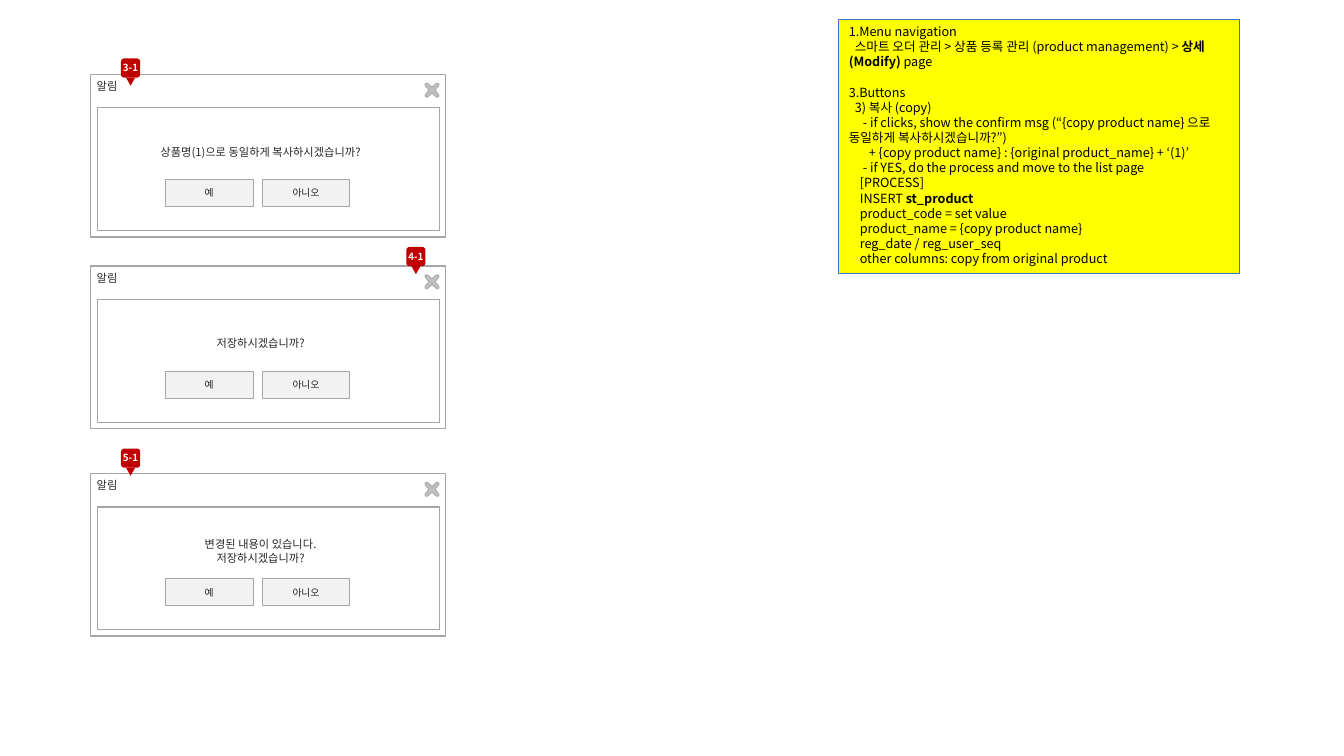
"""Build the confirmation dialogs slide with its functional notes."""
from dataclasses import dataclass

from pptx import Presentation
from pptx import util as u
from pptx.dml.color import RGBColor
from pptx.enum import shapes as s
from pptx.enum import text as t
from pptx.oxml import ns

FONT = "Noto Sans CJK KR"
DARK, WHITE, BLACK = "262626", "FFFFFF", "000000"
GREY, RED = "A6A6A6", "C00000"
DIALOG_LEFT = 0.9
TIGHT = (0.06, 0.03)
REGULAR = (0.1, 0.05)
RECTANGLE = s.MSO_SHAPE.RECTANGLE
ROUNDED = s.MSO_SHAPE.ROUNDED_RECTANGLE
CENTER = t.PP_ALIGN.CENTER
MIDDLE = t.MSO_ANCHOR.MIDDLE
ARM = [(0, -0.03), (0.04, -0.065), (0.055, -0.07), (0.065, -0.065), (0.07, -0.055), (0.065, -0.04)]


@dataclass(frozen=True)
class Dialog:
    top: float
    message: str
    badge: str
    badge_left: float
    badge_top: float


@dataclass(frozen=True)
class Note:
    runs: tuple[str, ...]
    indent: float = 0
    bold_run: int = -1
    space_before: float = 0


DIALOGS = [
    Dialog(0.74, "상품명(1)으로 동일하게 복사하시겠습니까?", "3-1", 1.2, 0.58),
    Dialog(2.64, "저장하시겠습니까?", "4-1", 4.03, 2.45),
    Dialog(4.7, "변경된 내용이 있습니다.\n저장하시겠습니까?", "5-1", 1.2, 4.45),
]

NOTES = [
    Note(("1.Menu navigation",)),
    Note(("스마트 오더 관리 > 상품 등록 관리 (product management) > ", "상세 (Modify)", " page"), 0.06, 1),
    Note(("3.Buttons",), space_before=10.8),
    Note(("3) 복사 (copy)",), 0.06),
    Note(("- if clicks, show the confirm msg (“{copy product name} 으로 동일하게 복사하시겠습니까?”)",), 0.14),
    Note(("+ {copy product name} : {original product_name} + ‘(1)’",), 0.2),
    Note(("- if YES, do the process and move to the list page",), 0.14),
    Note(("[PROCESS]",), 0.11),
    Note(("INSERT ", "st_product"), 0.11, 1),
    Note(("product_code = set value",), 0.11),
    Note(("product_name = {copy product name}",), 0.11),
    Note(("reg_date / reg_user_seq",), 0.11),
    Note(("other columns: copy from original product",), 0.11),
]


def color(value: str) -> RGBColor:
    return RGBColor.from_string(value)


def paint(shape, fill: str, line: str = "", width: float = 0.5) -> None:
    shape.shadow.inherit = False
    shape.fill.solid()
    shape.fill.fore_color.rgb = color(fill)
    if line:
        shape.line.color.rgb = color(line)
        shape.line.width = u.Pt(width)
    else:
        shape.line.fill.background()


def add_box(parent, kind, left: float, top: float, width: float, height: float,
            fill: str, line: str = "", line_width: float = 0.5):
    shape = parent.add_shape(kind, *map(u.Inches, (left, top, width, height)))
    paint(shape, fill, line, line_width)
    return shape


def format_run(run, size: float, value: str, bold: bool = False) -> None:
    run.font.size = u.Pt(size)
    run.font.name = FONT
    run.font.bold = bold
    run.font.color.rgb = color(value)
    east_asian = run.font._element.makeelement(ns.qn("a:ea"), {"typeface": FONT})
    run.font._element.find(ns.qn("a:latin")).addnext(east_asian)


def set_frame(shape, insets: tuple[float, float], anchor=t.MSO_ANCHOR.TOP, wrap: bool = True):
    frame = shape.text_frame
    frame.word_wrap = wrap
    frame.vertical_anchor = anchor
    frame.margin_left = frame.margin_right = u.Inches(insets[0])
    frame.margin_top = frame.margin_bottom = u.Inches(insets[1])
    return frame


def write(shape, text: str, size: float, value: str = DARK, bold: bool = False,
          align=CENTER, **frame_options) -> None:
    frame = set_frame(shape, **frame_options)
    frame.text = text
    for paragraph in frame.paragraphs:
        paragraph.alignment = align
        if len(frame.paragraphs) > 1:
            paragraph.line_spacing = u.Pt(10)
        for run in paragraph.runs:
            format_run(run, size, value, bold)


def add_label(parent, left: float, top: float, width: float, height: float):
    return parent.add_textbox(*map(u.Inches, (left, top, width, height)))


def add_close_icon(parent, center_x: float, center_y: float) -> None:
    points, arm = [], ARM
    for _ in range(4):
        points += [(u.Inches(center_x + x), u.Inches(center_y + y)) for x, y in arm]
        arm = [(-y, x) for x, y in arm]
    builder = parent.build_freeform(*points[0], scale=1.0)
    builder.add_line_segments(points[1:], close=True)
    paint(builder.convert_to_shape(), "BFBFBF", GREY)


def add_badge(parent, text: str, left: float, top: float) -> None:
    badge = parent.add_group_shape().shapes
    pointer = add_box(badge, s.MSO_SHAPE.ISOSCELES_TRIANGLE, left + 0.05, top + 0.19, 0.09, 0.08, RED)
    pointer.rotation = 180
    add_box(badge, ROUNDED, left, top, 0.19, 0.19, RED)
    label = add_label(badge, left - 0.04, top - 0.015, 0.27, 0.22)
    write(label, text, 7, WHITE, True, insets=(0.05, 0.05))


def add_dialog(parent, dialog: Dialog) -> None:
    left, top = DIALOG_LEFT, dialog.top
    add_box(parent, RECTANGLE, left, top, 3.52, 1.61, WHITE, GREY, 1)
    add_box(parent, RECTANGLE, left + 0.07, top + 0.33, 3.39, 1.22, WHITE, GREY, 0.75)
    for offset, answer in ((1.7, "아니오"), (0.74, "예")):
        button = add_box(parent, ROUNDED, left + offset, top + 1.04, 0.87, 0.27, "F2F2F2", GREY)
        button.adjustments[0] = 0
        write(button, answer, 7, insets=REGULAR, anchor=MIDDLE, wrap=False)
    add_close_icon(parent, left + 3.385, top + 0.155)
    message = add_label(parent, left + 0.11, top + 0.49, 3.15, 0.55)
    write(message, dialog.message, 8, insets=TIGHT, anchor=MIDDLE)
    heading = add_label(parent, left, top + 0.02, 0.47, 0.21)
    write(heading, "알림", 8, align=t.PP_ALIGN.LEFT, insets=TIGHT)
    add_badge(parent, dialog.badge, dialog.badge_left, dialog.badge_top)


def add_notes(parent) -> None:
    panel = add_box(parent, RECTANGLE, 8.32, 0.19, 3.97, 2.52, "FFFF00", "4472C4", 0.75)
    frame = set_frame(panel, REGULAR)
    for index, note in enumerate(NOTES):
        paragraph = frame.add_paragraph() if index else frame.paragraphs[0]
        paragraph.alignment = t.PP_ALIGN.LEFT
        paragraph.line_spacing = u.Pt(10.8)
        paragraph.space_before = u.Pt(note.space_before)
        paragraph._p.get_or_add_pPr().set("indent", str(u.Inches(note.indent)))
        for position, words in enumerate(note.runs):
            run = paragraph.add_run()
            run.text = words
            format_run(run, 9, BLACK, position == note.bold_run)


def main() -> None:
    presentation = Presentation()
    presentation.slide_width = u.Inches(13.33)
    presentation.slide_height = u.Inches(7.5)
    slide = presentation.slides.add_slide(presentation.slide_layouts[6])
    for dialog in DIALOGS:
        add_dialog(slide.shapes, dialog)
    add_notes(slide.shapes)
    presentation.save("out.pptx")


if __name__ == "__main__":
    main()
